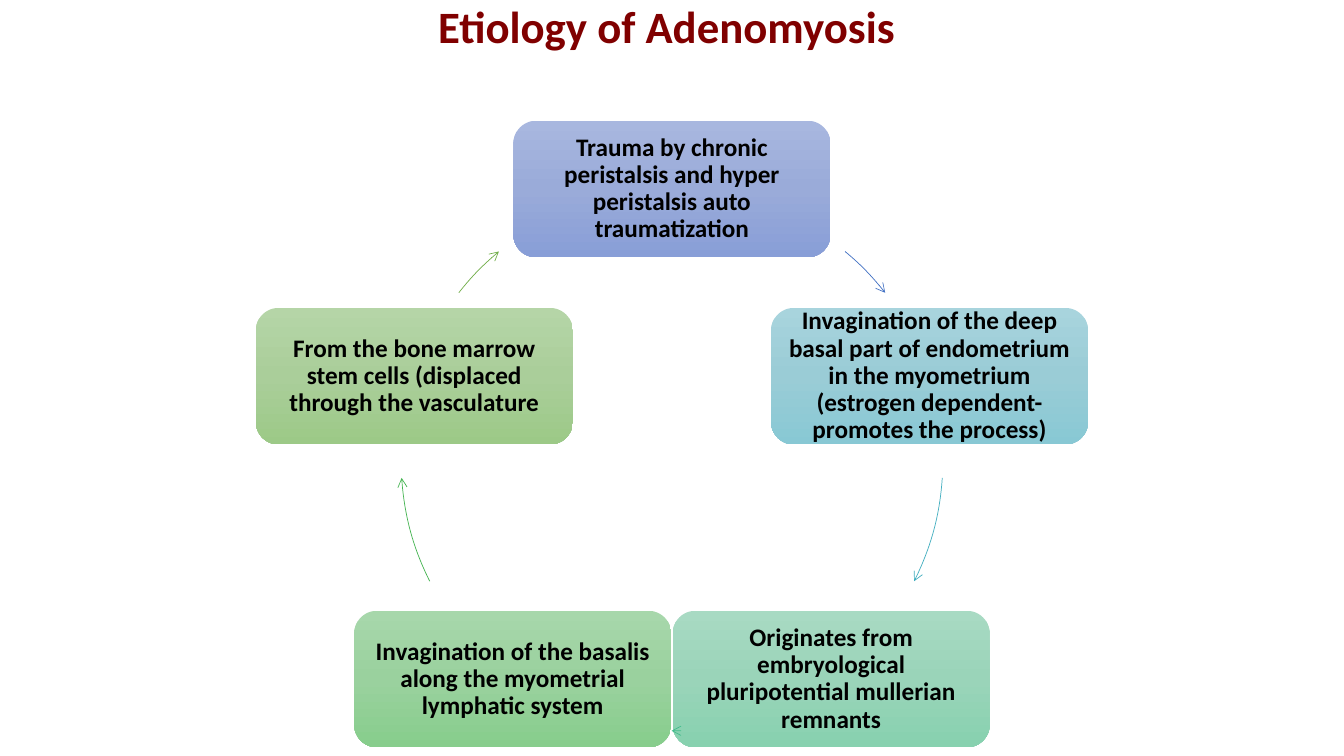
from copy import deepcopy
from dataclasses import dataclass
from math import cos, radians, sin

from pptx import Presentation
from pptx.dml.color import RGBColor
from pptx.enum.shapes import MSO_SHAPE
from pptx.enum.text import MSO_ANCHOR, PP_ALIGN
from pptx.oxml.ns import qn
from pptx.util import Pt
from lxml import etree

PX = 9525  # EMU in one px, 96 px to the inch
ARC, ROUNDED = MSO_SHAPE.ARC, MSO_SHAPE.ROUNDED_RECTANGLE
TOP, MIDDLE = MSO_ANCHOR.TOP, MSO_ANCHOR.MIDDLE
CENTER = PP_ALIGN.CENTER


@dataclass(frozen=True)
class Theme:
    font: str = "Calibri"
    title_size: int = 32
    body_size: int = 18
    title_color: str = "800000"
    body_color: str = "000000"
    line_width: float = 0.5


THEME = Theme()

# text, gradient colours, arrow colour, arrow start and end in degrees clockwise from east
CAUSES = [
    ("Trauma by chronic peristalsis and hyper peristalsis auto traumatization",
     ("A8B7DF", "9AABD9", "889ED7"), "4472C4", (309.7, 321.9)),
    ("Invagination of the deep basal part of endometrium in the myometrium "
     "(estrogen dependent- promotes the process)",
     ("A8D4DD", "9ACCD6", "88C8D4"), "43AFC0", (3.8, 26.6)),
    ("Originates from embryological pluripotential mullerian remnants",
     ("A8DAC3", "9AD4B9", "87D1AF"), "43BB8D", (89.9, 90.1)),
    ("Invagination of the basalis along the myometrial lymphatic system",
     ("A7D7AB", "9AD19E", "87CD8C"), "45B451", (153.4, 176.2)),
    ("From the bone marrow stem cells (displaced through the vasculature",
     ("B5D5A7", "AACE9A", "9CC987"), "70AD47", (218.1, 230.3)),
]


def emu(*lengths):
    return [round(length * PX) for length in lengths]


def write_text(shape, text, size, color, anchor, inset_x, inset_y):
    frame = shape.text_frame
    frame_format = {
        "word_wrap": True, "vertical_anchor": anchor,
        "margin_left": inset_x * PX, "margin_right": inset_x * PX,
        "margin_top": inset_y * PX, "margin_bottom": inset_y * PX,
    }
    paragraph = frame.paragraphs[0]
    paragraph.text = text
    font = paragraph.runs[0].font
    font.color.rgb = RGBColor.from_string(color)
    for target, values in (
        (frame, frame_format),
        (paragraph, {"alignment": CENTER, "line_spacing": 0.9}),
        (font, {"name": THEME.font, "size": Pt(size), "bold": True}),
    ):
        for name, value in values.items():
            setattr(target, name, value)


def fill_gradient(shape, colors):
    """Fill from top to bottom with evenly spaced colours."""
    fill = shape.fill
    fill.gradient()
    fill.gradient_angle = 270
    stop_list = shape.element.spPr.find(qn("a:gradFill")).find(qn("a:gsLst"))
    while len(stop_list) < len(colors):
        stop_list.append(deepcopy(stop_list[0]))
    for index, (stop, color) in enumerate(zip(fill.gradient_stops, colors)):
        stop.position = index / (len(colors) - 1)
        stop.color.rgb = RGBColor.from_string(color)


def add_title(slide, left, top, width, height):
    title = slide.shapes.add_textbox(*emu(left, top, width, height))
    write_text(title, "Etiology of Adenomyosis", THEME.title_size,
               THEME.title_color, TOP, 10, 5)


def add_cause(slide, left, top, width, height, text, colors):
    box = slide.shapes.add_shape(ROUNDED, *emu(left, top, width, height))
    box.shadow.inherit = False
    box.line.fill.background()
    fill_gradient(box, colors)
    write_text(box, text, THEME.body_size, THEME.body_color, MIDDLE, 7, 0)


def add_arc_arrow(slide, left, top, diameter, angles, color):
    arc = slide.shapes.add_shape(ARC, *emu(left, top, diameter, diameter))
    arc.shadow.inherit = False
    arc.fill.background()
    for index, angle in enumerate(angles):
        arc.adjustments[index] = angle * 0.6  # 60000 units a degree, scaled by 100000
    arc.line.color.rgb = RGBColor.from_string(color)
    arc.line.width = Pt(THEME.line_width)
    line = arc.element.spPr.find(qn("a:ln"))
    etree.SubElement(line, qn("a:tailEnd"), type="arrow")


def add_cycle(slide, left, top, diameter, box_width=302, box_height=130):
    """Centre the cause boxes on a circle, clockwise from its top."""
    radius = diameter / 2
    for index, (text, colors, arrow_color, angles) in enumerate(CAUSES):
        angle = radians(360 / len(CAUSES) * index - 90)
        box_left = left + radius * (1 + cos(angle)) - box_width / 2
        box_top = top + radius * (1 + sin(angle)) - box_height / 2
        add_cause(slide, box_left, box_top, box_width, box_height, text, colors)
        add_arc_arrow(slide, left, top, diameter, angles, arrow_color)


def main():
    presentation = Presentation()
    presentation.slide_width, presentation.slide_height = emu(1280, 720)
    slide = presentation.slides.add_slide(presentation.slide_layouts[6])
    add_title(slide, 83, 0, 1104, 139)
    add_cycle(slide, 382, 180, 516)
    presentation.save("out.pptx")


if __name__ == "__main__":
    main()
